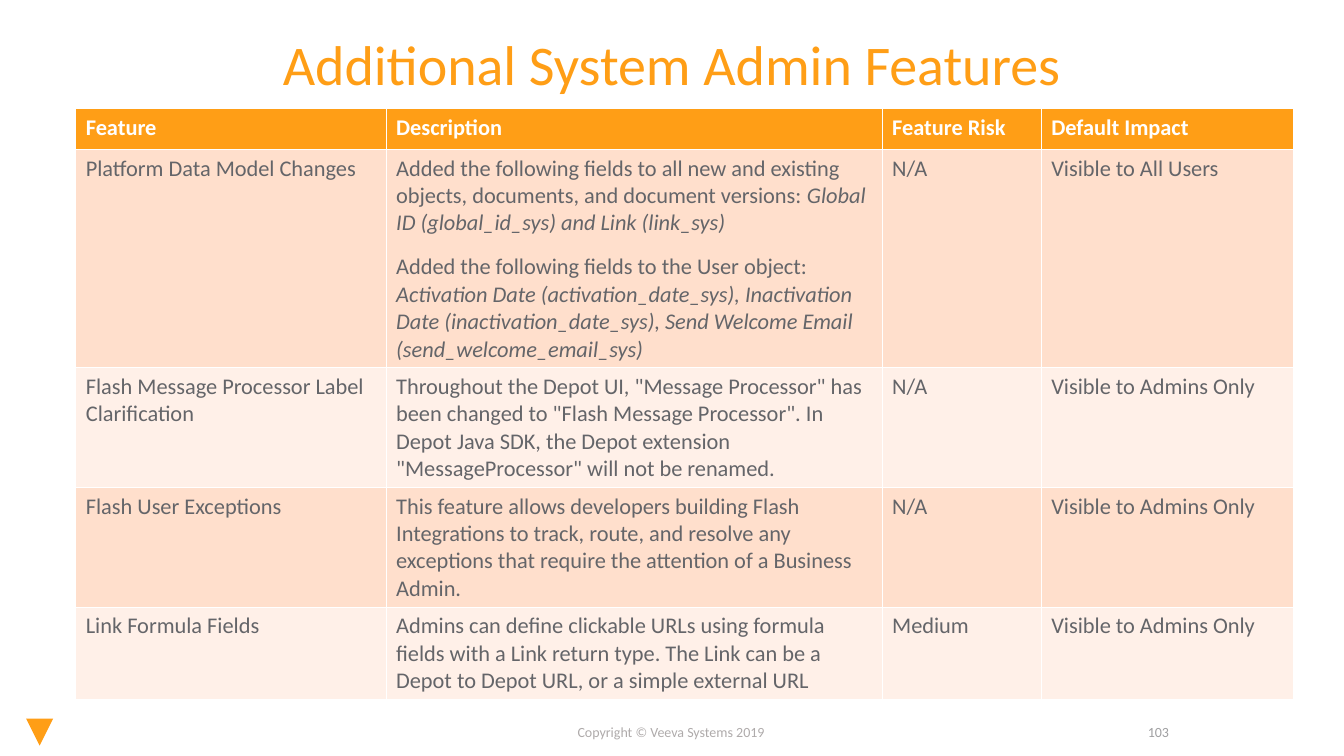
"""Builds the slide listing additional system admin features in a table."""
from pptx import Presentation
from pptx.dml.color import RGBColor
from pptx.enum.shapes import MSO_SHAPE as Shape
from pptx.enum.text import MSO_ANCHOR as Anchor, PP_ALIGN as Align
from pptx.util import Cm, Pt

ORANGE, GREY, WHITE = "FF9E16", "646569", "FFFFFF"
BANDS = ["FFDFCC", "FFF0E8"]


def paint(target, color):
    if hasattr(target, "solid"):
        target.solid()
        target = target.fore_color
    else:
        target = target.color
    target.rgb = RGBColor.from_string(color)


def add_span(para, text, size, color, **formats):
    span = para.add_run()
    span.text = text
    for name, value in {"name": "Calibri", "size": Pt(size), **formats}.items():
        setattr(span.font, name, value)
    paint(span.font, color)


deck = Presentation()
deck.slide_width, deck.slide_height = Cm(33.87), Cm(19.05)
page = deck.slides.add_slide(deck.slide_layouts[6])

emblem = page.shapes.add_shape(
    Shape.FLOWCHART_MERGE, Cm(0.66), Cm(18.11), Cm(0.68), Cm(0.68))
emblem.shadow.inherit = False
paint(emblem.fill, ORANGE)
emblem.line.fill.background()

labels = [
    ("103", (26.87, 18.11, 2.84, 0.68), 10, "9F9FA1", Align.RIGHT, Anchor.TOP, 1, True),
    ("Copyright © Veeva Systems 2019", (14.27, 18.11, 5.28, 0.68), 10, "AFABAB",
     Align.CENTER, Anchor.TOP, 1, False),
    ("Additional System Admin Features", (0.76, 0.28, 32.33, 3.05), 40, ORANGE,
     Align.CENTER, Anchor.MIDDLE, 0.7, True),
]
for text, place, size, color, align, anchor, spacing, wrap in labels:
    box = page.shapes.add_textbox(*map(Cm, place))
    frame = box.text_frame
    frame.word_wrap = wrap
    frame.vertical_anchor = anchor
    para = frame.paragraphs[0]
    para.alignment = align
    para.line_spacing = spacing
    add_span(para, text, size, color)

# In each cell, a line is a paragraph and the part after "|" is italic.
rows = [
    ("Feature", "Description", "Feature Risk", "Default Impact"),
    ("Platform Data Model Changes",
     "Added the following fields to all new and existing objects, documents, "
     "and document versions: |Global ID (global_id_sys) and Link (link_sys)\n"
     "Added the following fields to the User object: "
     "|Activation Date (activation_date_sys), Inactivation "
     "Date (inactivation_date_sys), Send Welcome Email (send_welcome_email_sys)",
     "N/A", "Visible to All Users"),
    ("Flash Message Processor Label Clarification",
     'Throughout the Depot UI, "Message Processor" has been changed to '
     '"Flash Message Processor". In Depot Java SDK, the Depot extension '
     '"MessageProcessor" will not be renamed.',
     "N/A", "Visible to Admins Only"),
    ("Flash User Exceptions",
     "This feature allows developers building Flash Integrations to track, route, "
     "and resolve any exceptions that require the attention of a Business Admin.",
     "N/A", "Visible to Admins Only"),
    ("Link Formula Fields",
     "Admins can define clickable URLs using formula fields with a Link return type. "
     "The Link can be a Depot to Depot URL, or a simple external URL",
     "Medium", "Visible to Admins Only"),
]
widths = [7.82, 12.5, 4.01, 6.35]
heights = [1.03, 5.5, 3.02, 3.02, 2.32]
table = page.shapes.add_table(
    len(rows), len(widths), Cm(1.91), Cm(2.74), Cm(sum(widths)), Cm(sum(heights))).table
for column, width in zip(table.columns, widths):
    column.width = Cm(width)

for row_index, (texts, height) in enumerate(zip(rows, heights)):
    table.rows[row_index].height = Cm(height)
    header = row_index == 0
    for column_index, text in enumerate(texts):
        cell = table.cell(row_index, column_index)
        paint(cell.fill, ORANGE if header else BANDS[(row_index - 1) % 2])
        frame = cell.text_frame
        lines = text.split("\n")
        for line_index, line in enumerate(lines):
            para = frame.add_paragraph() if line_index else frame.paragraphs[0]
            if len(lines) > 1:
                para.space_after = Pt(12)
            for part_index, part in enumerate(line.split("|")):
                add_span(para, part, 16, WHITE if header else GREY,
                         bold=header, italic=part_index == 1)

deck.save("out.pptx")
